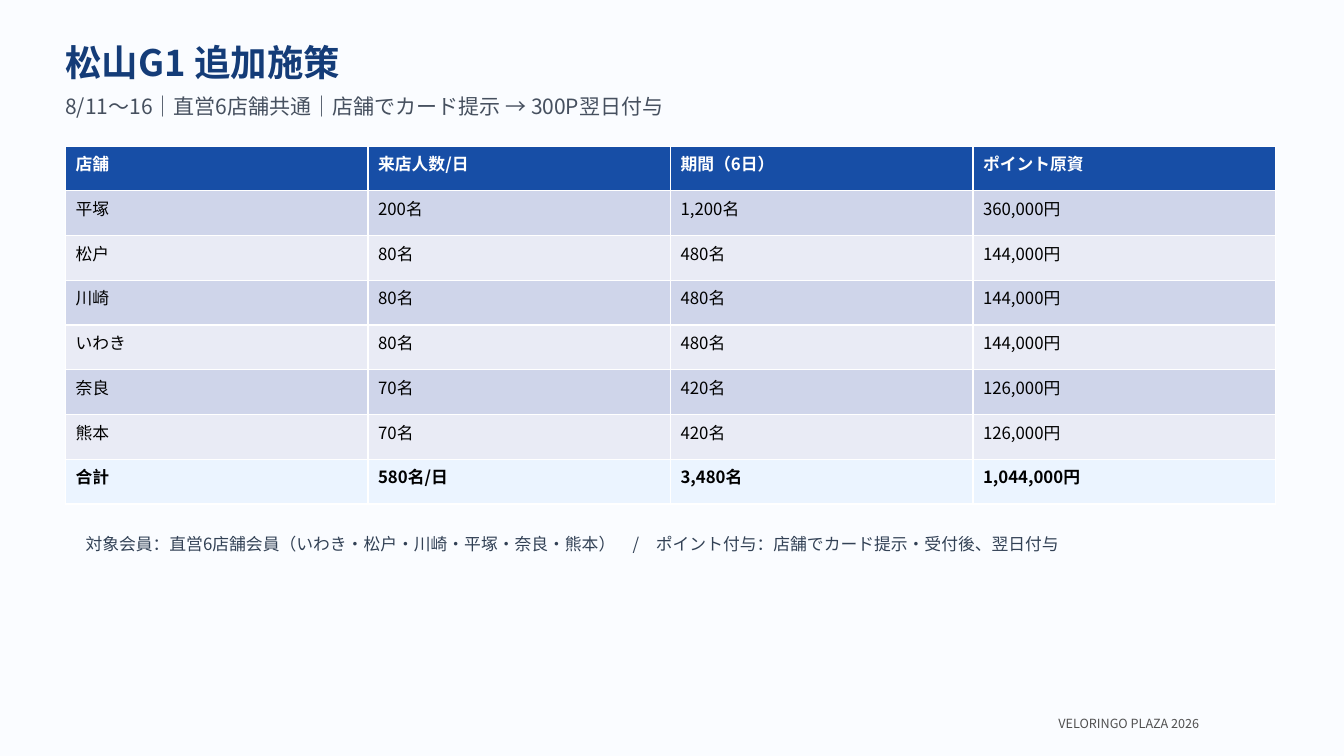
import pptx
import pptx.dml.color
import pptx.enum.shapes
import pptx.enum.text
import pptx.oxml.ns
import pptx.util

PX = 9144  # EMU per px, 100 px to the inch
SLIDE_W, SLIDE_H = 1333, 750
FONT = "Noto Sans CJK JP"
COLORS = {
    "backdrop": "FAFCFF",
    "title": "143C78",
    "subtitle": "46505F",
    "note": "324155",
    "footer": "505050",
    "header": "174EA6",
    "header_text": "FFFFFF",
    "odd_row": "CFD5EA",
    "even_row": "E9EBF5",
    "total_row": "EBF4FF",
    "cell_text": "000000",
}
STORE_ROWS = [
    ("店舗", "来店人数/日", "期間（6日）", "ポイント原資"),
    ("平塚", "200名", "1,200名", "360,000円"),
    ("松戸", "80名", "480名", "144,000円"),
    ("川崎", "80名", "480名", "144,000円"),
    ("いわき", "80名", "480名", "144,000円"),
    ("奈良", "70名", "420名", "126,000円"),
    ("熊本", "70名", "420名", "126,000円"),
    ("合計", "580名/日", "3,480名", "1,044,000円"),
]


def px(*lengths):
    return [pptx.util.Emu(n * PX) for n in lengths]


def rgb(name):
    return pptx.dml.color.RGBColor.from_string(COLORS[name])


def set_text(tf, text, size, color, bold=False):
    tf.text = text
    r = tf.paragraphs[0].runs[0]
    r.font.size = pptx.util.Pt(size)
    r.font.bold = bold
    r.font.name = FONT
    r.font.color.rgb = rgb(color)
    # East Asian typeface
    ea = r.font._element.makeelement(pptx.oxml.ns.qn("a:ea"), {"typeface": FONT})
    r.font._element.find(pptx.oxml.ns.qn("a:latin")).addnext(ea)


def add_backdrop(s):
    sp = s.shapes.add_shape(
        pptx.enum.shapes.MSO_SHAPE.RECTANGLE, *px(0, 0, SLIDE_W, SLIDE_H))
    sp.shadow.inherit = False
    sp.fill.solid()
    sp.fill.fore_color.rgb = rgb("backdrop")
    sp.line.fill.background()


def add_label(s, box, text, size, color, bold=False):
    tf = s.shapes.add_textbox(*px(*box)).text_frame
    tf.word_wrap = False
    tf.auto_size = pptx.enum.text.MSO_AUTO_SIZE.SHAPE_TO_FIT_TEXT
    set_text(tf, text, size, color, bold)


def add_store_table(s, box, rows):
    table = s.shapes.add_table(len(rows), len(rows[0]), *px(*box)).table
    last = len(rows) - 1
    for i, values in enumerate(rows):
        if i == 0:
            fill = "header"
        elif i == last:
            fill = "total_row"
        else:
            fill = "odd_row" if i % 2 else "even_row"
        color = "cell_text" if i else "header_text"
        for j, value in enumerate(values):
            cell = table.cell(i, j)
            cell.fill.solid()
            cell.fill.fore_color.rgb = rgb(fill)
            set_text(cell.text_frame, value, 12, color, bold=i in (0, last))


def main():
    prs = pptx.Presentation()
    prs.slide_width, prs.slide_height = px(SLIDE_W, SLIDE_H)
    s = prs.slides.add_slide(prs.slide_layouts[6])
    add_backdrop(s)

    # Heading
    add_label(s, (55, 35, 1200, 50), "松山G1 追加施策", 26, "title", bold=True)
    add_label(s, (55, 88, 1200, 35),
              "8/11～16｜直営6店舗共通｜店舗でカード提示 → 300P翌日付与", 15, "subtitle")

    # Visitors and point cost by store
    add_store_table(s, (65, 145, 1200, 355), STORE_ROWS)

    # Conditions and footer
    add_label(s, (75, 525, 1200, 40),
              "対象会員：直営6店舗会員（いわき・松戸・川崎・平塚・奈良・熊本）　/　"
              "ポイント付与：店舗でカード提示・受付後、翌日付与", 12, "note")
    add_label(s, (1040, 705, 250, 25), "VELORINGO PLAZA 2026", 9, "footer")

    prs.save("out.pptx")


if __name__ == "__main__":
    main()
